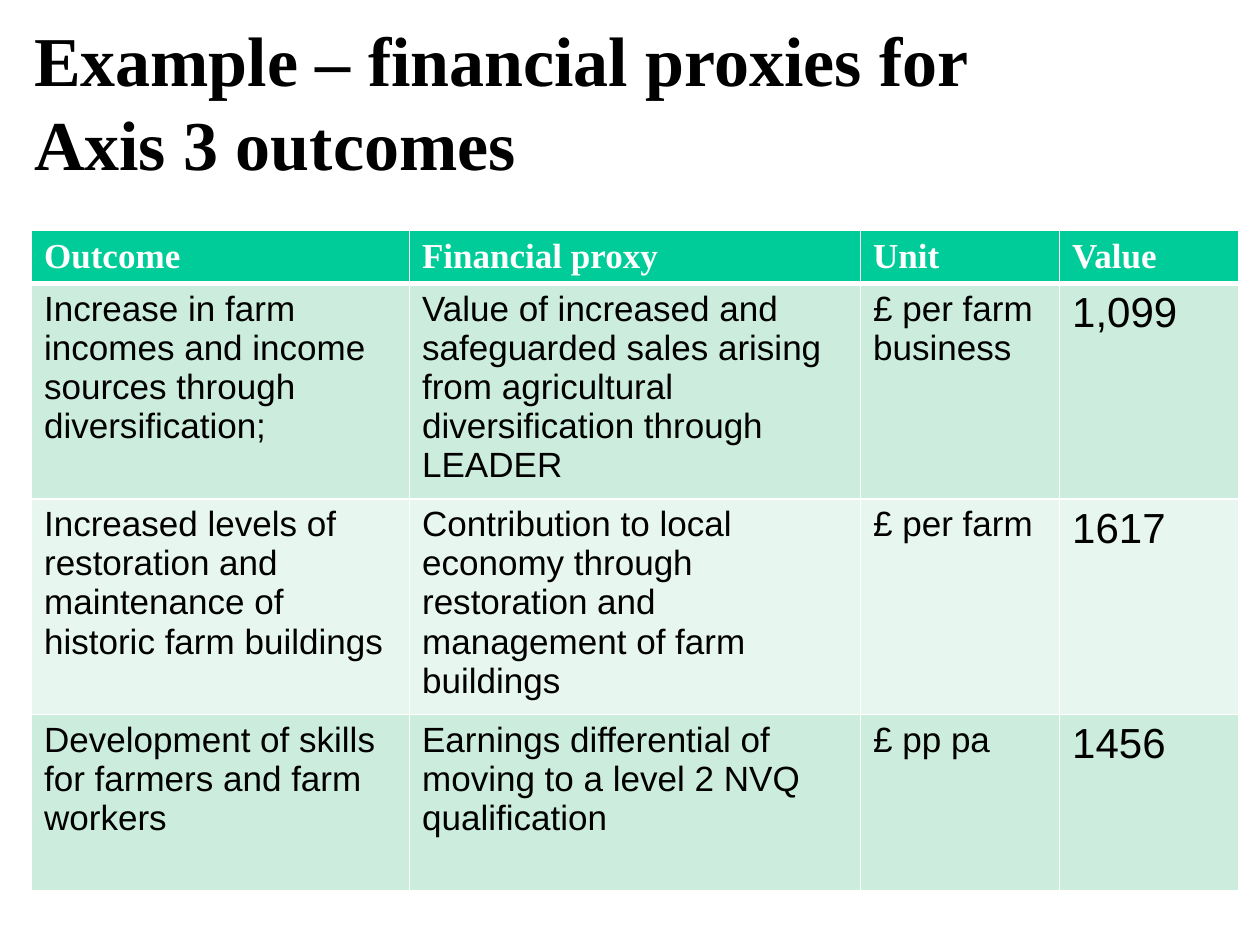
from pptx import Presentation
from pptx.dml.color import RGBColor
from pptx.enum.text import MSO_ANCHOR, MSO_AUTO_SIZE, PP_ALIGN
from pptx.oxml import parse_xml
from pptx.oxml.ns import nsdecls
from pptx.util import Inches, Pt

BLACK = RGBColor(0x00, 0x00, 0x00)
WHITE = RGBColor(0xFF, 0xFF, 0xFF)
GREEN = RGBColor(0x00, 0xCC, 0x99)
BANDS = RGBColor(0xCC, 0xEC, 0xDE), RGBColor(0xE7, 0xF6, 0xEF)

HEADING = "Example – financial proxies for Axis 3 outcomes"
PROXIES = [
    ("Outcome", "Financial proxy", "Unit", "Value"),
    (
        "Increase in farm incomes and income sources through diversification;",
        "Value of increased and safeguarded sales arising from agricultural "
        "diversification through LEADER",
        "£ per farm business",
        "1,099",
    ),
    (
        "Increased levels of restoration and maintenance of historic farm buildings",
        "Contribution to local economy through restoration and management of "
        "farm buildings",
        "£ per farm",
        "1617",
    ),
    (
        "Development of skills for farmers and farm workers",
        "Earnings differential of moving to a level 2 NVQ qualification",
        "£ pp pa",
        "1456",
    ),
]
COLUMN_WIDTHS = 3, 3.58, 1.58, 1.42
ROW_HEIGHTS = 0.42, 1.71, 1.71, 1.4
VALUE_COLUMN = len(COLUMN_WIDTHS) - 1


def style_font(font, face, size, color, bold):
    font.name = face
    font.size = Pt(size)
    font.color.rgb = color
    font.bold = bold


def add_borders(cell, top, bottom):
    properties = cell._tc.get_or_add_tcPr()
    for side, points in (("L", 1), ("R", 1), ("T", top), ("B", bottom)):
        properties.append(parse_xml(
            f'<a:ln{side} {nsdecls("a")} w="{Pt(points)}"><a:solidFill>'
            f'<a:srgbClr val="{WHITE}"/></a:solidFill></a:ln{side}>'
        ))


def add_heading(slide):
    title = slide.shapes.title
    title.left, title.top = Inches(0.17), Inches(0.17)
    title.width, title.height = Inches(8.5), Inches(1.25)
    frame = title.text_frame
    frame.text = HEADING
    frame.word_wrap = True
    frame.auto_size = MSO_AUTO_SIZE.NONE
    frame.vertical_anchor = MSO_ANCHOR.MIDDLE
    paragraph = frame.paragraphs[0]
    paragraph.alignment = PP_ALIGN.LEFT
    style_font(paragraph.font, "Times New Roman", 40, BLACK, True)


def add_proxy_table(slide):
    table = slide.shapes.add_table(
        len(PROXIES), len(COLUMN_WIDTHS), Inches(0.25), Inches(1.83),
        Inches(sum(COLUMN_WIDTHS)), Inches(sum(ROW_HEIGHTS)),
    ).table
    for column, width in zip(table.columns, COLUMN_WIDTHS):
        column.width = Inches(width)
    for row, height in zip(table.rows, ROW_HEIGHTS):
        row.height = Inches(height)

    for r, entries in enumerate(PROXIES):
        header = r == 0
        for c, entry in enumerate(entries):
            cell = table.cell(r, c)
            cell.text = entry
            add_borders(cell, 3 if r == 1 else 1, 3 if header else 1)
            cell.fill.solid()
            cell.fill.fore_color.rgb = GREEN if header else BANDS[(r - 1) % 2]
            font = cell.text_frame.paragraphs[0].font
            if header:
                style_font(font, "Times New Roman", 20, WHITE, True)
            else:
                size = 24 if c == VALUE_COLUMN else 20
                style_font(font, "Arial", size, BLACK, False)


def main():
    deck = Presentation()
    deck.slide_width, deck.slide_height = Inches(10), Inches(7.5)
    slide = deck.slides.add_slide(deck.slide_layouts[5])
    add_heading(slide)
    add_proxy_table(slide)
    deck.save("out.pptx")


if __name__ == "__main__":
    main()
